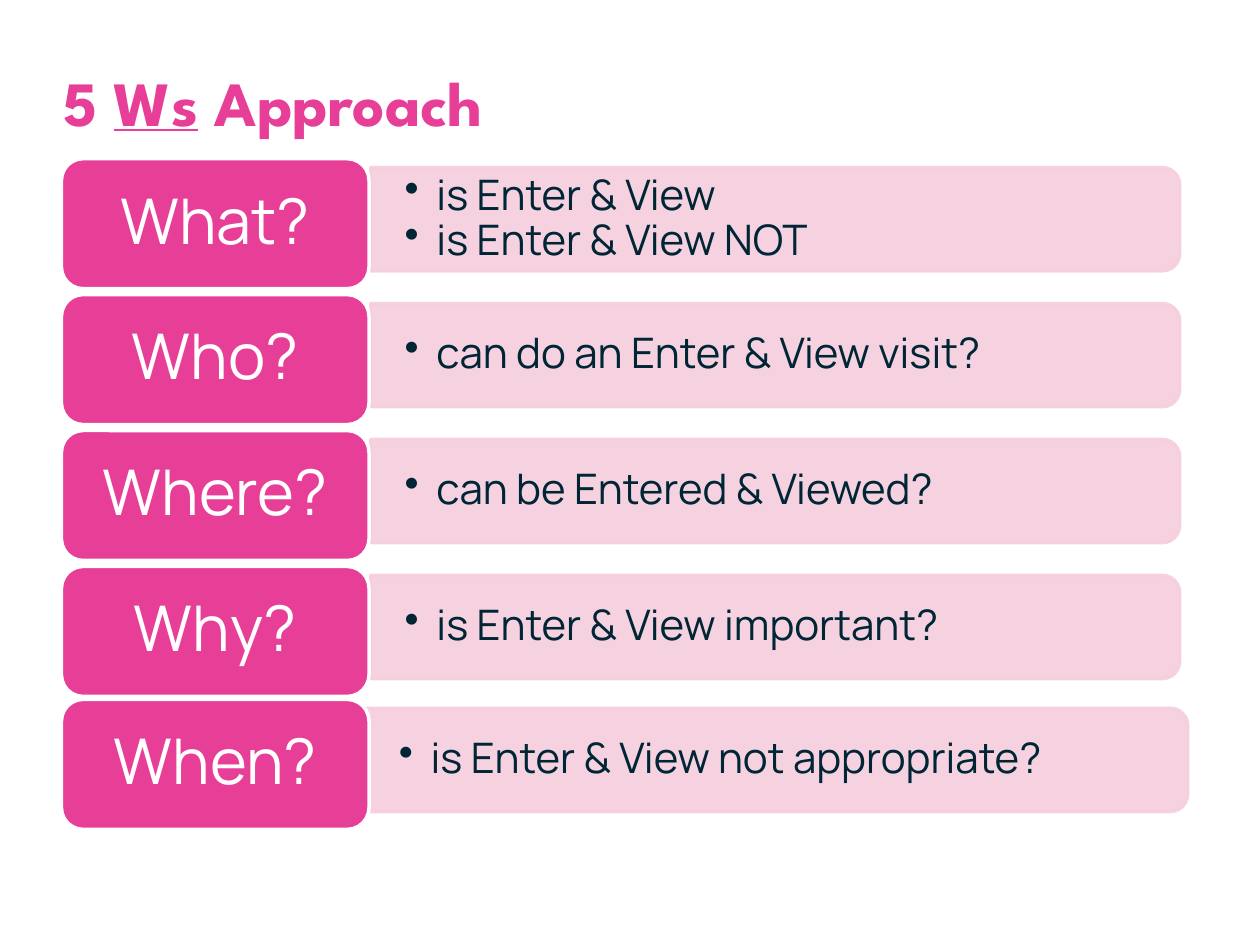
from dataclasses import dataclass

from lxml import etree
from pptx import Presentation
from pptx.dml.color import RGBColor
from pptx.enum.shapes import MSO_SHAPE
from pptx.enum.text import MSO_ANCHOR, MSO_AUTO_SIZE, PP_ALIGN
from pptx.oxml.ns import qn
from pptx.util import Cm, Pt

LABEL_SHAPE = MSO_SHAPE.ROUNDED_RECTANGLE
PANEL_SHAPE = MSO_SHAPE.ROUND_2_SAME_RECTANGLE
TOP, MIDDLE = MSO_ANCHOR.TOP, MSO_ANCHOR.MIDDLE
LEFT, CENTER = PP_ALIGN.LEFT, PP_ALIGN.CENTER
NO_AUTOFIT = MSO_AUTO_SIZE.NONE


@dataclass(frozen=True)
class Theme:
    pink: RGBColor = RGBColor(0xE7, 0x3E, 0x97)
    blush: RGBColor = RGBColor(0xF6, 0xCE, 0xDD)
    navy: RGBColor = RGBColor(0x00, 0x26, 0x36)
    white: RGBColor = RGBColor(0xFF, 0xFF, 0xFF)
    heading_font: str = "League Spartan"
    body_font: str = "Manrope"
    large: Pt = Pt(36)
    medium: Pt = Pt(24)
    outline: Pt = Pt(2)


THEME = Theme()

LABEL_LEFT, LABEL_WIDTH, LABEL_HEIGHT = 1.24, 6.2, 2.62
PANEL_HEIGHT, PANEL_RISE = 2.08, 0.09
FIRST_TOP, ROW_STEP, LAST_TOP = 3.2, 2.74, 14.1
PANEL_SPAN, LAST_PANEL_SPAN = (7.47, 16.31), (7.35, 16.59)

QUESTIONS = [
    ("What?", ["is Enter & View", "is Enter & View NOT"]),
    ("Who?", ["can do an Enter & View visit?"]),
    ("Where?", ["can be Entered & Viewed?"]),
    ("Why?", ["is Enter & View important?"]),
    ("When?", ["is Enter & View not appropriate?"]),
]


def set_font(font, size, color, name, **extra):
    for key, value in {"size": size, "name": name, **extra}.items():
        setattr(font, key, value)
    font.color.rgb = color


def set_frame(frame, anchor, side, end):
    """Side and end are the horizontal and vertical margins in cm."""
    values = {
        "word_wrap": True,
        "auto_size": NO_AUTOFIT,
        "vertical_anchor": anchor,
        "margin_left": Cm(side),
        "margin_right": Cm(side),
        "margin_top": Cm(end),
        "margin_bottom": Cm(end),
    }
    for key, value in values.items():
        setattr(frame, key, value)


def add_bullet(para):
    properties = para._p.get_or_add_pPr()
    properties.set("marL", str(Cm(0.64)))
    properties.set("indent", str(-Cm(0.64)))
    etree.SubElement(properties, qn("a:buChar")).set("char", "•")


def set_opacity(color_format, percent):
    color = color_format._xFill.find(qn("a:srgbClr"))
    etree.SubElement(color, qn("a:alpha")).set("val", str(percent * 1000))


def add_block(page, kind, left, top, width, height, fill, line):
    block = page.shapes.add_shape(kind, Cm(left), Cm(top), Cm(width), Cm(height))
    block.shadow.inherit = False
    block.fill.solid()
    block.fill.fore_color.rgb = fill
    block.line.color.rgb = line
    block.line.width = THEME.outline
    return block


def add_title(page):
    title = page.shapes.title
    title.left, title.top = Cm(1.27), Cm(1.27)
    title.width, title.height = Cm(22.81), Cm(1.3)
    set_frame(title.text_frame, TOP, 0, 0)
    para = title.text_frame.paragraphs[0]
    para.alignment = LEFT
    for text, underline in [("5 ", False), ("Ws", True), (" Approach", False)]:
        span = para.add_run()
        span.text = text
        set_font(span.font, THEME.large, THEME.pink, THEME.heading_font,
                 bold=True, underline=underline)


def add_panel(page, left, middle, width):
    """Draw an upright shape and turn it so its round corners face right."""
    block = add_block(page, PANEL_SHAPE,
                      left + (width - PANEL_HEIGHT) / 2, middle - width / 2,
                      PANEL_HEIGHT, width, THEME.blush, THEME.blush)
    block.rotation = 90
    for fill in (block.fill, block.line.fill):
        color = fill._xPr.find(qn("a:solidFill")).find(qn("a:srgbClr"))
        etree.SubElement(color, qn("a:alpha")).set("val", "90000")


def add_answers(page, left, middle, width, answers):
    height = 1.88
    box = page.shapes.add_textbox(Cm(left), Cm(middle - height / 2),
                                  Cm(width - 0.1), Cm(height))
    frame = box.text_frame
    set_frame(frame, MIDDLE, 0.69, 0.36)
    for index, answer in enumerate(answers):
        para = frame.add_paragraph() if index else frame.paragraphs[0]
        para.line_spacing = 0.9
        add_bullet(para)
        span = para.add_run()
        span.text = answer
        set_font(span.font, THEME.medium, THEME.navy, THEME.body_font)


def add_label(page, top, text):
    block = add_block(page, LABEL_SHAPE, LABEL_LEFT, top, LABEL_WIDTH,
                      LABEL_HEIGHT, THEME.pink, THEME.white)
    set_frame(block.text_frame, MIDDLE, 0.51, 0.31)
    para = block.text_frame.paragraphs[0]
    para.alignment = CENTER
    para.line_spacing = 0.9
    span = para.add_run()
    span.text = text
    set_font(span.font, THEME.large, THEME.white, THEME.body_font)


def add_question(page, top, panel_span, question, answers):
    left, width = panel_span
    middle = top + LABEL_HEIGHT / 2 - PANEL_RISE
    add_panel(page, left, middle, width)
    add_answers(page, left, middle, width, answers)
    add_label(page, top, question)


def main():
    deck = Presentation()
    deck.slide_width, deck.slide_height = Cm(25.4), Cm(19.05)
    page = deck.slides.add_slide(deck.slide_layouts[5])
    add_title(page)
    *regular, last = QUESTIONS
    for row, (question, answers) in enumerate(regular):
        add_question(page, FIRST_TOP + row * ROW_STEP, PANEL_SPAN, question, answers)
    add_question(page, LAST_TOP, LAST_PANEL_SPAN, *last)
    deck.save("out.pptx")


if __name__ == "__main__":
    main()
